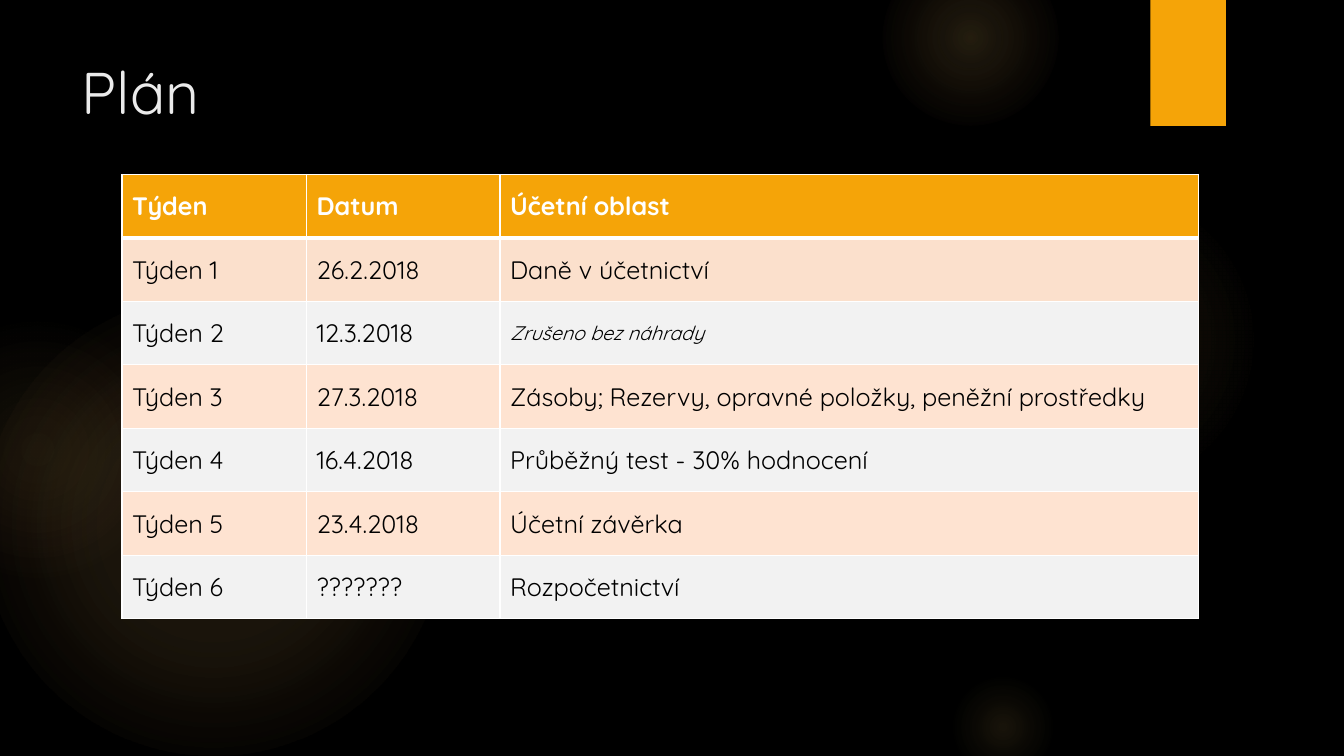
"""Build the course plan slide: glowing dark backdrop, title and weekly table."""
from dataclasses import dataclass

from pptx import Presentation, oxml, util as u
from pptx.dml import color as c
from pptx.enum import shapes as s, text as t
from pptx.oxml import ns

BLACK = c.RGBColor(0x00, 0x00, 0x00)
WHITE = c.RGBColor(0xFF, 0xFF, 0xFF)
PALE = c.RGBColor(0xEB, 0xEB, 0xEB)
ORANGE = c.RGBColor(0xF5, 0xA4, 0x08)
GOLD = c.RGBColor(0xFA, 0xC9, 0x6A)
CORAL = c.RGBColor(0xF5, 0x9B, 0x74)
CREAM = c.RGBColor(0xFB, 0xE0, 0xCC)
PEACH = c.RGBColor(0xFE, 0xE3, 0xD1)
GREY = c.RGBColor(0xF2, 0xF2, 0xF2)

FACE = "Quicksand"
TITLE = {"name": FACE, "size": u.Pt(42)}
HEAD = {"name": FACE, "size": u.Pt(18), "bold": True}
BODY = {"name": FACE, "size": u.Pt(18), "bold": False}
NOTE = BODY | {"size": u.Pt(14), "italic": True}


@dataclass
class Glow:
    """A soft round light; each stop is a position and an opacity in percent."""
    left: float
    top: float
    size: float
    stops: tuple[tuple[int, int], ...]
    rim: c.RGBColor = GOLD


@dataclass
class Row:
    """One table row with its fill and font formats."""
    texts: tuple[str, str, str]
    fill: c.RGBColor
    ink: c.RGBColor = BLACK
    form: dict | None = None
    last: dict | None = None
    base: int = 1


GLOWS = [
    Glow(-0.17, 2.92, 4.58, ((0, 11), (36, 10), (75, 0))),
    Glow(-0.92, 3.17, 2.58, ((0, 8), (36, 5), (71, 0)), CORAL),
    Glow(9.41, 1.83, 3.08, ((0, 7), (36, 6), (69, 0))),
    Glow(8.75, -0.5, 1.75, ((0, 14), (36, 7), (73, 0))),
    Glow(9.41, 6.67, 1.08, ((0, 10), (31, 5), (66, 0))),
]
COLS = (1.83, 1.92, 6.93)
HIGH = 0.63
ROWS = [
    Row(("Týden", "Datum", "Účetní oblast"), ORANGE, WHITE, HEAD, base=3),
    Row(("Týden 1", "26.2.2018", "Daně v účetnictví"), CREAM),
    Row(("Týden 2", "12.3.2018", "Zrušeno bez náhrady"), GREY, last=NOTE),
    Row(("Týden 3", "27.3.2018",
         "Zásoby; Rezervy, opravné položky, peněžní prostředky"), PEACH),
    Row(("Týden 4", "16.4.2018", "Průběžný test - 30% hodnocení"), GREY),
    Row(("Týden 5", "23.4.2018", "Účetní závěrka"), PEACH),
    Row(("Týden 6", "???????", "Rozpočetnictví"), GREY),
]


def write(frame, words: str, ink: c.RGBColor, form: dict) -> None:
    """Put one formatted run into a text frame."""
    run = frame.paragraphs[0].add_run()
    run.text = words
    run.font.color.rgb = ink
    for key, val in form.items():
        setattr(run.font, key, val)


def add_form(slide, kind: s.MSO_SHAPE, *box: float):
    """Add a preset shape without line or shadow."""
    form = slide.shapes.add_shape(kind, *map(u.Inches, box))
    form.shadow.inherit = False
    form.line.fill.background()
    return form


def add_glow(slide, glow: Glow) -> None:
    """Draw a light as an ellipse with a radial, fading fill."""
    form = add_form(slide, s.MSO_SHAPE.OVAL,
                    glow.left, glow.top, glow.size, glow.size)
    form.fill.background()
    hues = (GOLD, GOLD, glow.rim)
    stops = "".join(
        f'<a:gs pos="{pos * 1000}"><a:srgbClr val="{hue}">'
        f'<a:alpha val="{alpha * 1000}"/></a:srgbClr></a:gs>'
        for (pos, alpha), hue in zip(glow.stops, hues))
    grad = oxml.parse_xml(
        f'<a:gradFill {ns.nsdecls("a")} rotWithShape="1">'
        f'<a:gsLst>{stops}</a:gsLst><a:path path="circle">'
        '<a:fillToRect l="50000" t="50000" r="50000" b="50000"/>'
        '</a:path></a:gradFill>')
    props = form._element.spPr
    props.replace(props.find(ns.qn("a:noFill")), grad)


def add_edges(cell, base: int, top: int) -> None:
    """Give a cell white borders."""
    props = cell._tc.get_or_add_tcPr()
    widths = {"L": 1, "R": 1, "T": top, "B": base}
    for spot, (side, width) in enumerate(widths.items()):
        props.insert(spot, oxml.parse_xml(
            f'<a:ln{side} {ns.nsdecls("a")} w="{u.Pt(width)}"><a:solidFill>'
            f'<a:srgbClr val="{WHITE}"/></a:solidFill></a:ln{side}>'))


def add_plan(slide) -> None:
    """Draw the weekly plan as a table."""
    box = (1.21, 1.73, sum(COLS), HIGH * len(ROWS))
    grid = slide.shapes.add_table(
        len(ROWS), len(COLS), *map(u.Inches, box)).table
    for col, wide in zip(grid.columns, COLS):
        col.width = u.Inches(wide)
    top = 1
    for line, row in enumerate(ROWS):
        grid.rows[line].height = u.Inches(HIGH)
        form = row.form or BODY
        forms = (form, form, row.last or form)
        for cell, words, look in zip(grid.rows[line].cells, row.texts, forms):
            cell.fill.solid()
            cell.fill.fore_color.rgb = row.fill
            cell.vertical_anchor = t.MSO_ANCHOR.MIDDLE
            add_edges(cell, row.base, top)
            write(cell.text_frame, words, row.ink, look)
        top = row.base


def main() -> None:
    """Assemble and save the slide."""
    deck = Presentation()
    deck.slide_width, deck.slide_height = u.Inches(13.33), u.Inches(7.5)
    slide = deck.slides.add_slide(deck.slide_layouts[6])
    slide.background.fill.solid()
    slide.background.fill.fore_color.rgb = BLACK
    for glow in GLOWS:
        add_glow(slide, glow)
    flag = add_form(slide, s.MSO_SHAPE.RECTANGLE, 11.41, 0, 0.75, 1.25)
    flag.fill.solid()
    flag.fill.fore_color.rgb = ORANGE
    title = slide.shapes.add_textbox(*map(u.Inches, (0.71, 0.5, 10.29, 1.53)))
    title.text_frame.word_wrap = True
    write(title.text_frame, "Plán", PALE, TITLE)
    add_plan(slide)
    deck.save("out.pptx")


if __name__ == "__main__":
    main()
